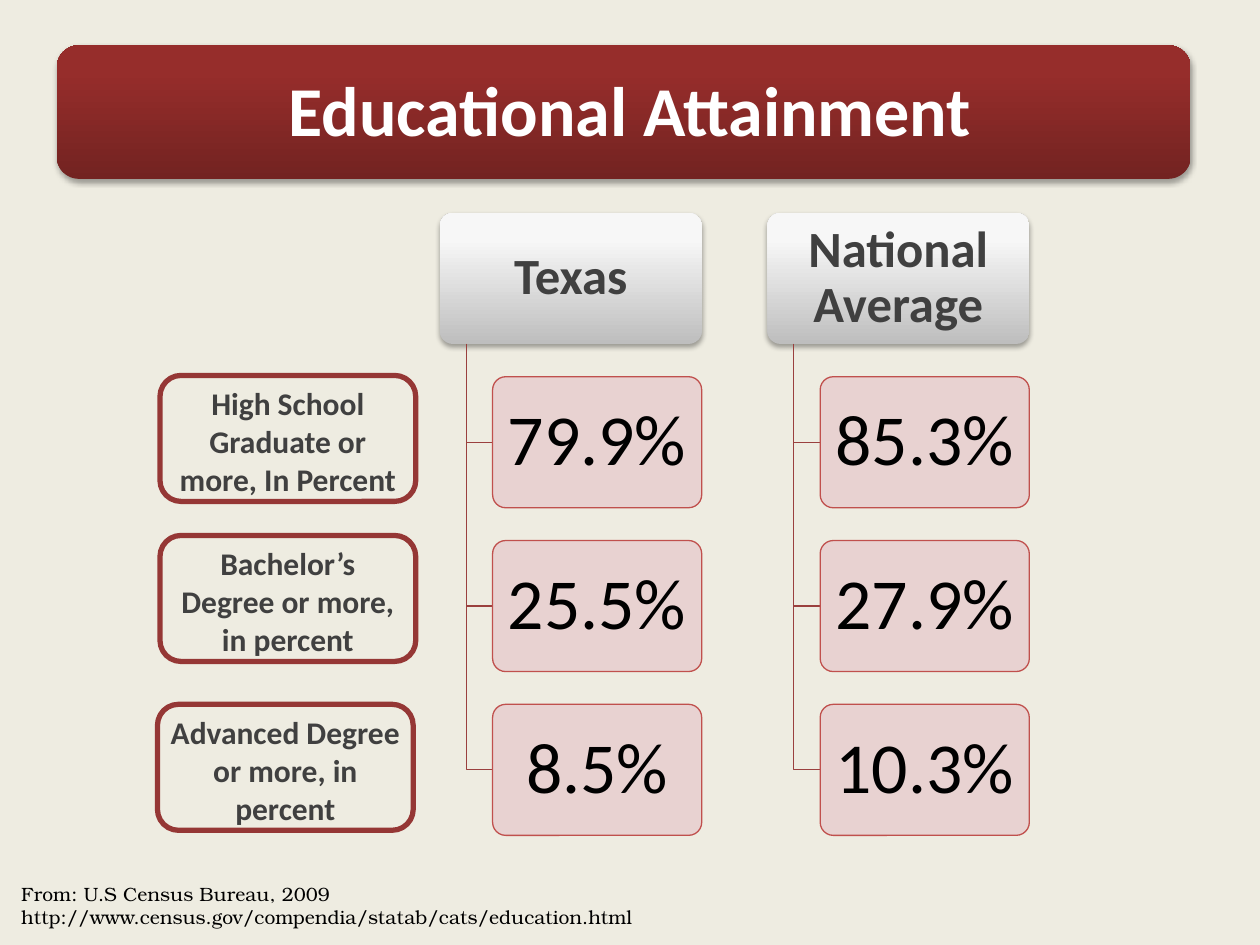
from dataclasses import dataclass

from lxml import etree
from pptx import Presentation
from pptx.dml.color import RGBColor
from pptx.enum.shapes import MSO_SHAPE
from pptx.enum.text import MSO_ANCHOR, MSO_AUTO_SIZE, PP_ALIGN
from pptx.oxml import parse_xml
from pptx.oxml.ns import nsdecls, qn
from pptx.slide import Slide
from pptx.util import Inches, Pt

ROUNDED = MSO_SHAPE.ROUNDED_RECTANGLE
TOP, MIDDLE = MSO_ANCHOR.TOP, MSO_ANCHOR.MIDDLE
LEFT, CENTER = PP_ALIGN.LEFT, PP_ALIGN.CENTER
NO_AUTOFIT = MSO_AUTO_SIZE.NONE
TITLE_ONLY = 5

COLUMNS = [
    ("Texas", ["79.9%", "25.5%", "8.5%"]),
    ("National Average", ["85.3%", "27.9%", "10.3%"]),
]
LABELS = [
    ("High School Graduate or more, In Percent", 1.27, 2.98),
    ("Bachelor’s Degree or more, in percent", 1.27, 4.25),
    ("Advanced Degree or more, in percent", 1.25, 5.59),
]
SOURCE = [
    "From: U.S Census Bureau, 2009",
    "http://www.census.gov/compendia/statab/cats/education.html",
]


def color(value):
    return RGBColor.from_string(value)


@dataclass
class Board:
    slide: Slide
    font: str = "Calibri"
    source_font: str = "TeX Gyre Bonum"
    background: str = "EEECE1"
    dark: str = "404040"
    border: str = "953735"
    connector: str = "9A403E"
    value_fill: str = "E8D0D0"
    value_line: str = "C0504D"
    title_stops: tuple = ((0, "732321"), (80, "962D2B"), (100, "992C29"))
    header_stops: tuple = ((0, "BEBEBE"), (80, "F7F7F7"), (100, "F8F8F8"))
    grid_left: float = 3.49
    grid_top: float = 1.69
    column_step: float = 2.6
    row_step: float = 1.3
    card_width: float = 2.08
    card_height: float = 1.04
    indent: float = 0.42

    def column(self, index):
        return self.grid_left + index * self.column_step

    def row(self, index):
        return self.grid_top + index * self.row_step

    def paint_background(self):
        fill = self.slide.background.fill
        fill.solid()
        fill.fore_color.rgb = color(self.background)

    def add_text(self, shape, lines, size, text_color, bold=False, font=None,
                 align=CENTER, anchor=MIDDLE, insets=(0.06, 0.04), spacing=0.9):
        frame = shape.text_frame
        frame.word_wrap = True
        frame.auto_size = NO_AUTOFIT
        frame.vertical_anchor = anchor
        frame.margin_left = frame.margin_right = Inches(insets[0])
        frame.margin_top = frame.margin_bottom = Inches(insets[1])
        for index, line in enumerate(lines):
            paragraph = frame.add_paragraph() if index else frame.paragraphs[0]
            paragraph.alignment = align
            paragraph.line_spacing = spacing
            run = paragraph.add_run()
            run.text = line
            run.font.name = font or self.font
            run.font.size = Pt(size)
            run.font.bold = bold
            run.font.color.rgb = color(text_color)

    def box(self, left, top, width, height, line=None, weight=0.75, corner=None):
        shape = self.slide.shapes.add_shape(
            ROUNDED, Inches(left), Inches(top), Inches(width), Inches(height))
        shape.shadow.inherit = False
        shape.fill.background()
        if corner:
            shape.adjustments[0] = corner
        if line:
            shape.line.color.rgb = color(line)
            shape.line.width = Pt(weight)
        else:
            shape.line.fill.background()
        return shape

    def glossy(self, shape, stops):
        properties = shape.element.spPr
        stop_xml = "".join(
            f'<a:gs pos="{position * 1000}"><a:srgbClr val="{value}"/></a:gs>'
            for position, value in stops)
        gradient = parse_xml(
            f'<a:gradFill {nsdecls("a")} rotWithShape="1"><a:gsLst>{stop_xml}</a:gsLst>'
            '<a:lin ang="16200000" scaled="0"/></a:gradFill>')
        properties.replace(properties.find(qn("a:noFill")), gradient)
        shadow = parse_xml(
            f'<a:outerShdw {nsdecls("a")} blurRad="{Pt(3.1)}" dist="{Pt(1.8)}" '
            'dir="5400000" rotWithShape="0"><a:srgbClr val="000000">'
            '<a:alpha val="35000"/></a:srgbClr></a:outerShdw>')
        properties.find(qn("a:effectLst")).append(shadow)

    def title(self, text):
        self.glossy(self.box(0.45, 0.36, 9, 1.06), self.title_stops)
        title = self.slide.shapes.title
        title.left, title.top = Inches(0.55), Inches(0.42)
        title.width, title.height = Inches(8.9), Inches(0.96)
        self.slide.shapes.element.append(title.element)
        self.add_text(title, [text], 40, "FFFFFF", bold=True, insets=(0.17, 0.17))

    def header(self, column, text):
        shape = self.box(self.column(column), self.row(0),
                         self.card_width, self.card_height, corner=0.1)
        self.glossy(shape, self.header_stops)
        self.add_text(shape, [text], 29, self.dark, bold=True)

    def elbow(self, column, row):
        trunk = Inches(self.column(column) + self.indent / 2)
        end = Inches(self.column(column) + self.indent)
        start = Inches(self.row(0) + self.card_height)
        middle = Inches(self.row(row) + self.card_height / 2)
        builder = self.slide.shapes.build_freeform(trunk, start)
        builder.add_line_segments([(trunk, middle), (end, middle)], close=False)
        shape = builder.convert_to_shape()
        shape.shadow.inherit = False
        shape.fill.background()
        shape.line.color.rgb = color(self.connector)
        shape.line.width = Pt(0.75)

    def value(self, column, row, text):
        shape = self.box(self.column(column) + self.indent, self.row(row),
                         self.card_width - self.indent, self.card_height,
                         line=self.value_line, corner=0.1)
        shape.fill.solid()
        shape.fill.fore_color.rgb = color(self.value_fill)
        fill_color = shape.element.spPr.find(qn("a:solidFill")).find(qn("a:srgbClr"))
        etree.SubElement(fill_color, qn("a:alpha")).set("val", "90000")
        self.add_text(shape, [text], 41, "000000", insets=(0.09, 0.06))

    def label(self, text, left, top):
        shape = self.box(left, top, 2.03, 1, line=self.border, weight=3)
        self.add_text(shape, [text], 18, self.dark, bold=True,
                      anchor=TOP, insets=(0.05, 0.02), spacing=1.0)

    def source(self, lines):
        shape = self.slide.shapes.add_textbox(
            Inches(0.07), Inches(6.95), Inches(5.21), Inches(0.47))
        self.add_text(shape, lines, 11, "000000", font=self.source_font,
                      align=LEFT, anchor=TOP, insets=(0.1, 0.05), spacing=1.0)


def main():
    presentation = Presentation()
    presentation.slide_width = Inches(10)
    presentation.slide_height = Inches(7.5)
    layout = presentation.slide_layouts[TITLE_ONLY]
    board = Board(presentation.slides.add_slide(layout))
    board.paint_background()
    board.title("Educational Attainment")
    for column, (heading, values) in enumerate(COLUMNS):
        board.header(column, heading)
        for row, text in enumerate(values, start=1):
            board.elbow(column, row)
            board.value(column, row, text)
    for text, left, top in LABELS:
        board.label(text, left, top)
    board.source(SOURCE)
    presentation.save("out.pptx")


if __name__ == "__main__":
    main()
